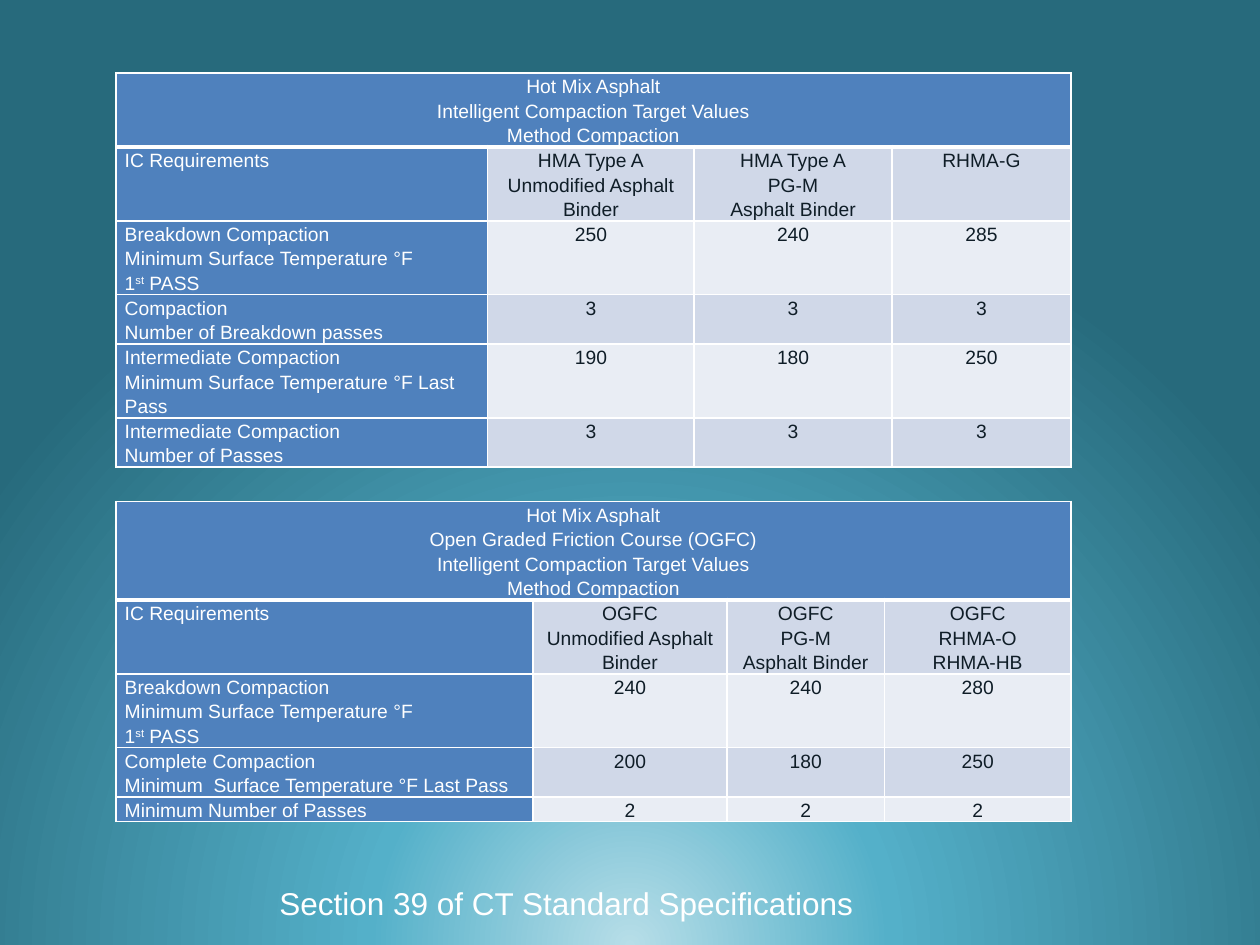
"""Build the slide of asphalt compaction target tables."""
from pptx import Presentation
from pptx.dml.color import RGBColor as RGB
from pptx.enum.text import MSO_AUTO_SIZE as AUTO, PP_ALIGN as AL
from pptx.oxml import parse_xml
from pptx.oxml.ns import nsdecls
from pptx.util import Inches, Pt

COLORS = {"white": "FFFFFF", "ink": "0F1D27", "head": "4F81BD",
          "band": "D0D8E8", "pale": "E9EDF4"}
GLOW = [(0, "B7DEE8"), (33, "54B0C9"), (100, "276A7C")]
W, H = 10, 7.5
LEFT, LINE = 0.92, 0.19
BREAKDOWN = "Breakdown Compaction\nMinimum Surface Temperature °F\n1^st^ PASS"
TABLES = [
    {"top": 0.58, "cols": [2.95, 1.64, 1.57, 1.42],
     "title": "Hot Mix Asphalt\nIntelligent Compaction Target Values\nMethod Compaction",
     "rows": [
         ("IC Requirements", "HMA Type A\nUnmodified Asphalt Binder",
          "HMA Type A\nPG-M\nAsphalt Binder", "RHMA-G"),
         (BREAKDOWN, "250", "240", "285"),
         ("Compaction\nNumber of Breakdown passes", "3", "3", "3"),
         ("Intermediate Compaction\nMinimum Surface Temperature °F Last Pass",
          "190", "180", "250"),
         ("Intermediate Compaction\nNumber of Passes", "3", "3", "3")]},
    {"top": 3.98, "cols": [3.31, 1.54, 1.25, 1.48],
     "title": "Hot Mix Asphalt\nOpen Graded Friction Course (OGFC)\n"
              "Intelligent Compaction Target Values\nMethod Compaction",
     "rows": [
         ("IC Requirements", "OGFC\nUnmodified Asphalt Binder",
          "OGFC\nPG-M\nAsphalt Binder", "OGFC\nRHMA-O\nRHMA-HB"),
         (BREAKDOWN, "240", "240", "280"),
         ("Complete Compaction\nMinimum  Surface Temperature °F Last Pass",
          "200", "180", "250"),
         ("Minimum Number of Passes", "2", "2", "2")]},
]
CAPTION = {"text": "Section 39 of CT Standard Specifications",
           "at": (2.12, 6.97, 5.17, 0.4)}
CELL = {"margin_left": Inches(0.07), "margin_right": Inches(0.07),
        "margin_top": 0, "margin_bottom": 0}


def add_run(p, text, size, color):
    r = p.add_run()
    r.text = text
    for key, value in {"name": "Arial", "size": Pt(size)}.items():
        setattr(r.font, key, value)
    r.font.color.rgb = RGB.from_string(COLORS[color])
    return r


def set_background(slide):
    stops = "".join(f'<a:gs pos="{pos * 1000}"><a:srgbClr val="{c}"/></a:gs>'
                    for pos, c in GLOW)
    slide.element.cSld.insert(0, parse_xml(
        f'<p:bg {nsdecls("p", "a")}><p:bgPr><a:gradFill rotWithShape="1">'
        f'<a:gsLst>{stops}</a:gsLst><a:path path="circle"><a:fillToRect '
        'l="50000" t="130000" r="50000" b="-30000"/></a:path></a:gradFill>'
        '<a:effectLst/></p:bgPr></p:bg>'))


def set_borders(cell, bottom):
    tc_pr = cell._tc.get_or_add_tcPr()
    for i, (side, width) in enumerate(zip("LRTB", (1, 1, 1, bottom))):
        tc_pr.insert(i, parse_xml(
            f'<a:ln{side} {nsdecls("a")} w="{Pt(width)}"><a:solidFill>'
            f'<a:srgbClr val="{COLORS["white"]}"/></a:solidFill></a:ln{side}>'))


def fill_cell(cell, text, fill, color, align):
    for key, value in CELL.items():
        setattr(cell, key, value)
    cell.fill.solid()
    cell.fill.fore_color.rgb = RGB.from_string(COLORS[fill])
    tf = cell.text_frame
    for i, line in enumerate(text.split("\n")):
        p = tf.add_paragraph() if i else tf.paragraphs[0]
        p.alignment, p.line_spacing = align, 1.15
        for j, part in enumerate(line.split("^")):
            r = add_run(p, part, 11, color)
            if j % 2:
                r.font._element.set("baseline", "30000")


def add_target_table(slide, top, cols, title, rows):
    grid = [(title, "", "", "")] + rows
    lines = [max(t.count("\n") + 1 for t in row) for row in grid]
    frame = slide.shapes.add_table(
        len(grid), len(cols), Inches(LEFT), Inches(top),
        Inches(sum(cols)), Inches(LINE * sum(lines)))
    table = frame.table
    for col, width in zip(table.columns, cols):
        col.width = Inches(width)
    table.cell(0, 0).merge(table.cell(0, len(cols) - 1))
    for i, row in enumerate(grid):
        table.rows[i].height = Inches(LINE * lines[i])
        for j, text in enumerate(row):
            cell = table.cell(i, j)
            if i == 0 or j == 0:
                style = "head", "white", AL.LEFT if i else AL.CENTER
            else:
                style = "band" if i % 2 else "pale", "ink", AL.CENTER
            fill_cell(cell, text, *style)
            set_borders(cell, 1 if i else 3)


def main():
    prs = Presentation()
    prs.slide_width, prs.slide_height = Inches(W), Inches(H)
    slide = prs.slides.add_slide(prs.slide_layouts[6])
    set_background(slide)
    for spec_table in TABLES:
        add_target_table(slide, **spec_table)
    tf = slide.shapes.add_textbox(*map(Inches, CAPTION["at"])).text_frame
    tf.word_wrap, tf.auto_size = True, AUTO.SHAPE_TO_FIT_TEXT
    add_run(tf.paragraphs[0], CAPTION["text"], 18, "white")
    prs.save("out.pptx")


if __name__ == "__main__":
    main()
